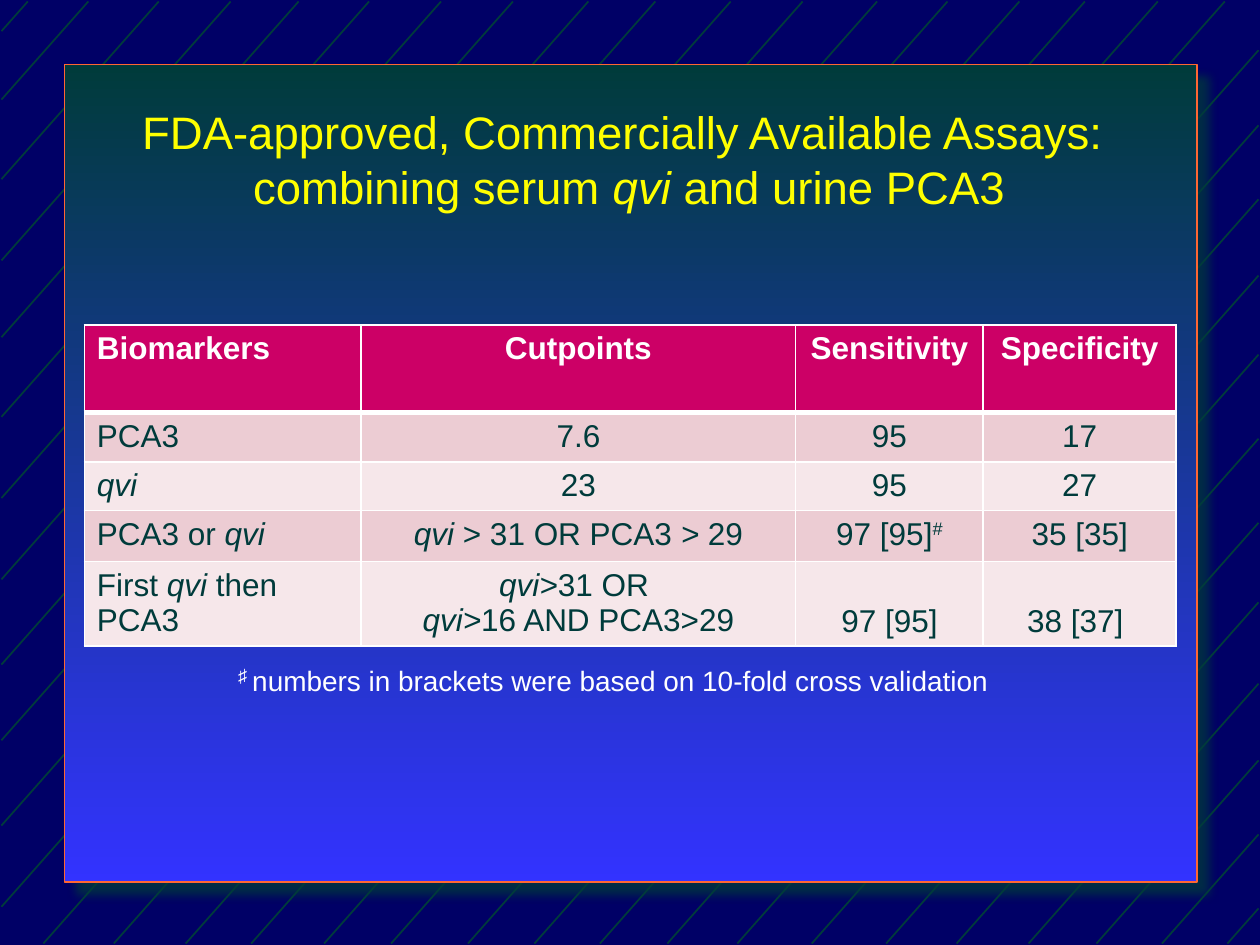
import pptx
import pptx.util
import pptx.dml.color
import pptx.enum.shapes
import pptx.enum.text
import pptx.oxml
import pptx.oxml.ns
from dataclasses import dataclass
from lxml import etree

Cm = pptx.util.Cm
Pt = pptx.util.Pt
ALIGN = pptx.enum.text.PP_ALIGN
ANCHOR = pptx.enum.text.MSO_ANCHOR
qn = pptx.oxml.ns.qn


@dataclass(frozen=True)
class Theme:
    font: str = "Arial"
    navy: str = "000066"
    green: str = "003B3B"
    blue: str = "3333FF"
    orange: str = "FF6633"
    yellow: str = "FFFF00"
    white: str = "FFFFFF"
    pink: str = "CC0066"
    bands: tuple = ("ECCCD3", "F6E7EA")
    title_size: int = 26
    table_size: int = 18
    note_size: int = 16


THEME = Theme()

# Each line is a list of (text, style): "" plain, "i" italic, "b" bold, "s" superscript.
TITLE = [
    [("FDA-approved, Commercially Available Assays: ", "")],
    [("combining serum ", ""), ("qvi", "i"), (" and urine PCA3", "")],
]
HEADERS = ["Biomarkers", "Cutpoints", "Sensitivity", "Specificity"]
# Rows hold cells, and cells hold lines.
ROWS = [
    [[[(name, "b")]] for name in HEADERS],
    [[[("PCA3", "")]], [[("7.6", "")]], [[("95", "")]], [[("17", "")]]],
    [[[("qvi", "i")]], [[("23", "")]], [[("95", "")]], [[("27", "")]]],
    [
        [[("PCA3 or ", ""), ("qvi", "i")]],
        [[("qvi ", "i"), ("> 31 OR PCA3 ", ""), ("> ", "i"), ("29", "")]],
        [[("97 [95]", ""), ("#", "s")]],
        [[("35 [35]", "")]],
    ],
    [
        [[("First ", ""), ("qvi ", "i"), ("then PCA3", "")]],
        [[("qvi>", "i"), ("31 OR ", "")], [("qvi>", "i"), ("16 AND PCA3>29", "")]],
        [[("97 [95]", "")]],
        [[("38 [37] ", "")]],
    ],
]
NOTE_MARK = "♯ "
NOTE = "numbers in brackets were based on 10-fold cross validation"

COLUMN_WIDTHS = [5.58, 8.76, 3.78, 3.89]
ROW_HEIGHTS = [1.77, 0.99, 0.98, 1.03, 1.7]

# Where each background stripe would meet the top edge, in cm.
STRIPES = [
    0.56, 1.78, 3.2, 4.65, 6.02, 7.44, 8.89, 10.34, 11.86, 13.21,
    14.73, 16.18, 17.68, 19.1, 20.55, 21.87, 23.34, 24.69, 26.24, 27.58,
    28.9, 30.26, 31.67, 33.17, 34.67, 36.09, 37.54, 38.91, 40.23, 41.55,
]
STRIPE_SLOPE = 1.13
LEFT, TOP, RIGHT, BOTTOM = 0.03, 0.03, 25.37, 19.02


def rgb(value):
    return pptx.dml.color.RGBColor.from_string(value)


def add_spans(para, line, size, color):
    for text, style in line:
        span = para.add_run()
        span.text = text
        span.font.name = THEME.font
        span.font.size = Pt(size)
        span.font.color.rgb = rgb(color)
        span.font.bold = style == "b"
        span.font.italic = style == "i"
        if style == "s":
            span._r.get_or_add_rPr().set("baseline", "30000")


def add_stripes(page):
    """Draw the parallel diagonals, each clipped to the page edges."""
    for start in STRIPES:
        x1 = min(start, RIGHT)
        y1 = TOP + (start - x1) * STRIPE_SLOPE
        y2 = min(TOP + (start - LEFT) * STRIPE_SLOPE, BOTTOM)
        x2 = start - (y2 - TOP) / STRIPE_SLOPE
        stripe = page.shapes.add_connector(
            pptx.enum.shapes.MSO_CONNECTOR.STRAIGHT, Cm(x1), Cm(y1), Cm(x2), Cm(y2))
        stripe.line.color.rgb = rgb(THEME.green)
        stripe.line.width = Pt(1)
        etree.SubElement(stripe.element.spPr, qn("a:effectLst"))


def add_panel(page):
    panel = page.shapes.add_shape(
        pptx.enum.shapes.MSO_SHAPE.RECTANGLE, Cm(1.3), Cm(1.3), Cm(22.83), Cm(16.48))
    panel.fill.gradient()
    panel.fill.gradient_angle = 270
    for stop, color, position in zip(
            panel.fill.gradient_stops, (THEME.green, THEME.blue), (0, 1)):
        stop.color.rgb = rgb(color)
        stop.position = position
    panel.line.color.rgb = rgb(THEME.orange)
    panel.line.width = Pt(1)
    panel.shadow.inherit = False
    effects = panel.element.spPr.find(qn("a:effectLst"))
    shadow = etree.SubElement(
        effects, qn("a:outerShdw"), blurRad=str(Pt(5)), dist=str(Pt(9.9)),
        dir="2700000", algn="ctr", rotWithShape="0")
    color = etree.SubElement(shadow, qn("a:srgbClr"), val=THEME.green)
    etree.SubElement(color, qn("a:alpha"), val="75000")


def fill_title(page):
    title = page.shapes.title
    title.left, title.top, title.width, title.height = Cm(1.47), Cm(2.1), Cm(22.43), Cm(3.18)
    title.element.getparent().append(title.element)  # in front of the panel
    frame = title.text_frame
    frame.word_wrap = True
    frame.auto_size = pptx.enum.text.MSO_AUTO_SIZE.NONE
    frame.vertical_anchor = ANCHOR.TOP
    frame.margin_top = 0
    para = frame.paragraphs[0]
    para.alignment = ALIGN.CENTER
    for number, line in enumerate(TITLE):
        if number:
            para.add_line_break()
        add_spans(para, line, THEME.title_size, THEME.yellow)


def set_borders(cell, top, bottom):
    properties = cell._tc.get_or_add_tcPr()
    for position, (side, width) in enumerate(
            (("lnL", 1), ("lnR", 1), ("lnT", top), ("lnB", bottom))):
        border = pptx.oxml.parse_xml(
            f'<a:{side} {pptx.oxml.ns.nsdecls("a")} w="{Pt(width)}"><a:solidFill>'
            f'<a:srgbClr val="{THEME.white}"/></a:solidFill></a:{side}>')
        properties.insert(position, border)


def add_results(page):
    table = page.shapes.add_table(
        len(ROWS), len(HEADERS), Cm(1.7), Cm(6.55),
        Cm(sum(COLUMN_WIDTHS)), Cm(sum(ROW_HEIGHTS))).table
    for column, width in zip(table.columns, COLUMN_WIDTHS):
        column.width = Cm(width)
    for row, height in zip(table.rows, ROW_HEIGHTS):
        row.height = Cm(height)
    last = len(ROWS) - 1
    for r, row in enumerate(ROWS):
        for c, lines in enumerate(row):
            cell = table.cell(r, c)
            cell.fill.solid()
            cell.fill.fore_color.rgb = rgb(THEME.bands[(r - 1) % 2] if r else THEME.pink)
            set_borders(cell, 3 if r == 1 else 1, 3 if r == 0 else 1)
            cell.vertical_anchor = ANCHOR.BOTTOM if r == last and c > 1 else ANCHOR.TOP
            for number, line in enumerate(lines):
                frame = cell.text_frame
                para = frame.add_paragraph() if number else frame.paragraphs[0]
                para.alignment = ALIGN.CENTER if c else ALIGN.LEFT
                add_spans(para, line, THEME.table_size, THEME.green if r else THEME.white)


def add_note(page):
    box = page.shapes.add_textbox(Cm(4.55), Cm(13.18), Cm(16.18), Cm(1.02))
    box.text_frame.word_wrap = True
    para = box.text_frame.paragraphs[0]
    add_spans(para, [(NOTE_MARK, "s")], THEME.table_size, THEME.white)
    add_spans(para, [(NOTE, "")], THEME.note_size, THEME.white)


def main():
    deck = pptx.Presentation()
    deck.slide_width, deck.slide_height = Cm(25.4), Cm(19.05)
    page = deck.slides.add_slide(deck.slide_layouts.get_by_name("Title Only"))
    page.background.fill.solid()
    page.background.fill.fore_color.rgb = rgb(THEME.navy)
    add_stripes(page)
    add_panel(page)
    fill_title(page)
    add_results(page)
    add_note(page)
    deck.save("out.pptx")


if __name__ == "__main__":
    main()
